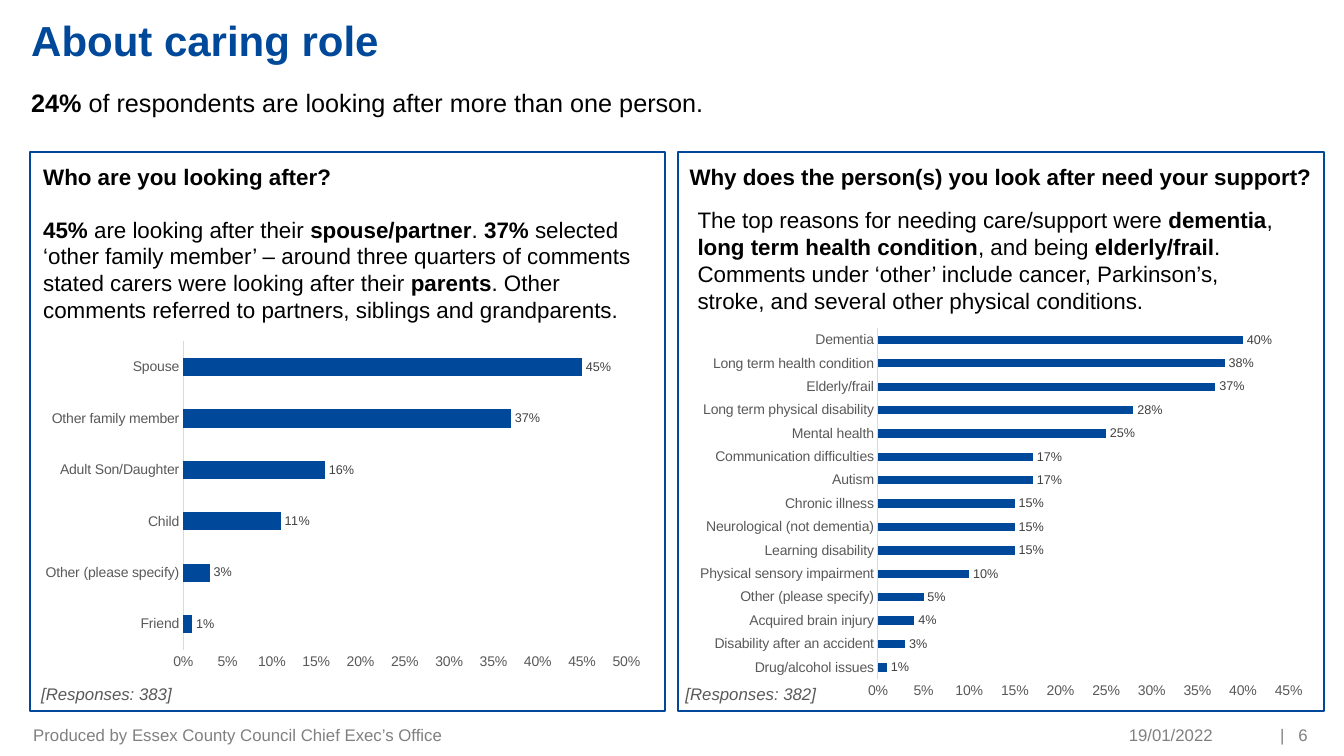
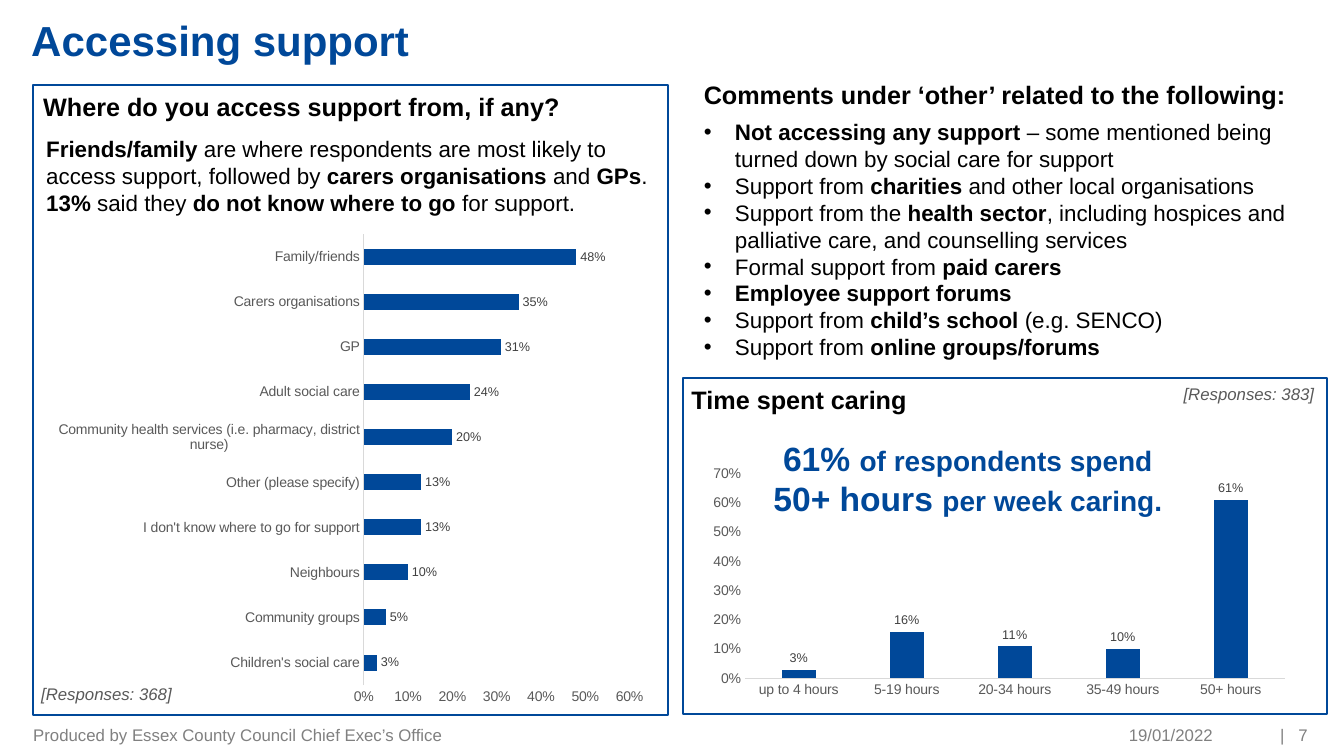
from dataclasses import dataclass

from lxml import etree
from pptx import Presentation
from pptx.chart.data import CategoryChartData
from pptx.dml.color import RGBColor
from pptx.enum.chart import XL_CHART_TYPE, XL_LABEL_POSITION, XL_TICK_MARK
from pptx.enum.shapes import MSO_SHAPE
from pptx.enum.text import MSO_ANCHOR, MSO_AUTO_SIZE, PP_ALIGN
from pptx.oxml.ns import qn
from pptx.util import Inches, Pt

BAR, COLUMN = XL_CHART_TYPE.BAR_CLUSTERED, XL_CHART_TYPE.COLUMN_CLUSTERED
LABEL_OUTSIDE = XL_LABEL_POSITION.OUTSIDE_END
NO_TICK = XL_TICK_MARK.NONE
RECT = MSO_SHAPE.RECTANGLE
MIDDLE, BOTTOM, TOP = MSO_ANCHOR.MIDDLE, MSO_ANCHOR.BOTTOM, MSO_ANCHOR.TOP
FIXED, GROW = MSO_AUTO_SIZE.NONE, MSO_AUTO_SIZE.SHAPE_TO_FIT_TEXT
LEFT, CENTER, RIGHT = PP_ALIGN.LEFT, PP_ALIGN.CENTER, PP_ALIGN.RIGHT
TITLE_CONTENT, TITLE_ONLY = 1, 5


@dataclass(frozen=True)
class Theme:
    font: str = "Arial"
    blue: RGBColor = RGBColor(0x00, 0x48, 0x99)
    black: RGBColor = RGBColor(0x00, 0x00, 0x00)
    footer: RGBColor = RGBColor(0x80, 0x80, 0x80)
    muted: RGBColor = RGBColor(0x59, 0x59, 0x59)
    label: RGBColor = RGBColor(0x40, 0x40, 0x40)
    axis: RGBColor = RGBColor(0xD9, 0xD9, 0xD9)
    title_size: int = 30
    callout_strong: int = 24
    callout_size: int = 20
    heading_size: int = 18
    body_size: int = 16
    small_size: int = 12
    axis_size: int = 10
    label_size: int = 9


class Deck:
    """Build slides that share one theme, title style and footer."""

    def __init__(self, theme):
        self.theme = theme
        self.prs = Presentation()
        self.prs.slide_width, self.prs.slide_height = Inches(13.33), Inches(7.5)
        self.s = None

    def slide(self, title, number, layout=TITLE_ONLY):
        t = self.theme
        self.s = self.prs.slides.add_slide(self.prs.slide_layouts[layout])
        sp = self.s.shapes.title
        self.place(sp, (0.21, 0.09, 5.18, 0.55))
        tf = self.frame(sp, BOTTOM, FIXED, (0.1, 0.05, 0.1, 0))
        self.paragraph(tf.paragraphs[0], title, t.title_size, t.blue, bold=True)
        self.footer("Produced by Essex County Council Chief Exec’s Office", 0.33, 6.3, LEFT)
        self.footer("19/01/2022", 9.63, 2.4, RIGHT)
        self.footer(f"|   {number}", 12.12, 0.85, RIGHT)

    def place(self, sp, box):
        sp.left, sp.top, sp.width, sp.height = map(Inches, box)

    def style(self, font, size, color, bold=None):
        font.name, font.size, font.bold = self.theme.font, Pt(size), bold
        font.color.rgb = color

    def frame(self, sp, anchor=TOP, fit=GROW, insets=(0.1, 0.05, 0.1, 0.05)):
        tf = sp.text_frame
        tf.word_wrap, tf.auto_size, tf.vertical_anchor = True, fit, anchor
        tf.margin_left, tf.margin_top, tf.margin_right, tf.margin_bottom = map(Inches, insets)
        return tf

    def paragraph(self, p, text, size, color, bold=False, align=LEFT, before=0, strong=None):
        self.style(p.font, size, color, bold)
        p.alignment, p.space_before = align, Pt(before)
        for i, part in enumerate(text.split("**")):
            if part:
                r = p.add_run()
                r.text = part
                if i % 2:
                    r.font.bold = True
                    if strong:
                        r.font.size = Pt(strong)

    def text(self, box, *lines, size=None, color=None, **options):
        t = self.theme
        tf = self.frame(self.s.shapes.add_textbox(*map(Inches, box)))
        for i, line in enumerate(lines):
            p = tf.add_paragraph() if i else tf.paragraphs[0]
            self.paragraph(p, line, size or t.body_size, color or t.black, **options)
        return tf

    def heading(self, box, text, size=None):
        self.text(box, text, size=size or self.theme.heading_size, bold=True)

    def callout(self, box, text):
        t = self.theme
        self.text(box, text, size=t.callout_size, color=t.blue, bold=True,
                  align=CENTER, strong=t.callout_strong)

    def responses(self, left, top, count):
        t = self.theme
        tf = self.text((left, top, 1.52, 0.3), f"[Responses: {count}]",
                       size=t.small_size, color=t.muted, before=4)
        tf.paragraphs[0].font.italic = True

    def footer(self, text, left, width, align):
        t = self.theme
        sp = self.s.shapes.add_textbox(*map(Inches, (left, 7.21, width, 0.15)))
        insets = (0, 0.05, 0.1, 0.05) if align == LEFT else (0.1, 0.05, 0, 0.05)
        tf = self.frame(sp, MIDDLE, FIXED, insets)
        self.paragraph(tf.paragraphs[0], text, t.small_size, t.footer, align=align)

    def panel(self, *box):
        sp = self.s.shapes.add_shape(RECT, *map(Inches, box))
        sp.shadow.inherit = False
        sp.fill.background()
        sp.line.color.rgb, sp.line.width = self.theme.blue, Pt(1.5)

    def bullets(self, box, heading, items):
        t = self.theme
        sp = self.s.placeholders[1]
        self.place(sp, box)
        tf = self.frame(sp, fit=FIXED)
        p = tf.paragraphs[0]
        self.paragraph(p, heading, t.heading_size, t.black, bold=True, before=6)
        self.indent(p, 0, None)
        for i, item in enumerate(items):
            p = tf.add_paragraph()
            self.paragraph(p, item, t.body_size, t.black, before=0 if i else 6)
            self.indent(p, 0.31, "•")

    def indent(self, p, width, bullet):
        pPr = p._p.get_or_add_pPr()
        pPr.set("marL", str(Inches(width)))
        pPr.set("indent", str(-Inches(width)))
        mark = etree.Element(qn("a:buChar" if bullet else "a:buNone"))
        if bullet:
            mark.set("char", bullet)
        pPr.find(qn("a:defRPr")).addprevious(mark)

    def chart(self, box, data, top, step, kind=BAR, gap=182, overlap=0, layout=None):
        t = self.theme
        cd = CategoryChartData(number_format="0%")
        cd.categories = list(data)
        cd.add_series("Series 1", [percent / 100 for percent in data.values()])
        chart = self.s.shapes.add_chart(kind, *map(Inches, box), cd).chart
        chart.has_legend = chart.has_title = False
        self.style(chart.font, t.axis_size, t.black)

        for axis in (chart.category_axis, chart.value_axis):
            axis.major_tick_mark = axis.minor_tick_mark = NO_TICK
            axis.has_major_gridlines = False
            self.style(axis.tick_labels.font, t.axis_size, t.muted)
        line = chart.category_axis.format.line
        line.color.rgb, line.width = t.axis, Pt(0.75)
        values = chart.value_axis
        values.format.line.fill.background()
        values.minimum_scale, values.maximum_scale, values.major_unit = 0, top, step
        values.tick_labels.number_format = "0%"
        values.tick_labels.number_format_is_linked = False

        plot = chart.plots[0]
        plot.gap_width, plot.overlap, plot.vary_by_categories = gap, overlap, False
        fill = plot.series[0].format.fill
        fill.solid()
        fill.fore_color.rgb = t.blue
        plot.has_data_labels = True
        labels = plot.data_labels
        labels.show_value, labels.position = True, LABEL_OUTSIDE
        labels.number_format, labels.number_format_is_linked = "0%", False
        self.style(labels.font, t.label_size, t.label)
        if layout:
            self.plot_layout(chart, layout)

    def plot_layout(self, chart, layout):
        area = chart.element.find(".//" + qn("c:plotArea"))
        for old in area.findall(qn("c:layout")):
            area.remove(old)
        node = etree.Element(qn("c:layout"))
        manual = etree.SubElement(node, qn("c:manualLayout"))
        settings = [("layoutTarget", "inner"), ("xMode", "edge"), ("yMode", "edge")]
        for tag, value in settings + list(zip("xywh", layout)):
            etree.SubElement(manual, qn(f"c:{tag}")).set("val", str(value))
        area.insert(0, node)


def caring_role(deck):
    size = deck.theme.body_size
    deck.slide("About caring role", 6)
    deck.text((0.21, 0.82, 7.28, 0.4),
              "**24% **of respondents are looking after more than one person.",
              size=deck.theme.heading_size)

    deck.panel(0.3, 1.51, 6.3, 5.54)
    deck.heading((0.33, 1.57, 6.15, 0.37), "Who are you looking after?", size)
    deck.text((0.33, 2.09, 6.14, 1.18),
              "**45% **are looking after their **spouse/partner**. **37% **selected "
              "‘other family member’ – around three quarters of comments stated carers "
              "were looking after their **parents**. Other comments referred to "
              "partners, siblings and grandparents.")
    deck.chart((0.33, 3.32, 6.14, 3.39), {
        "Friend": 1, "Other (please specify)": 3, "Child": 11,
        "Adult Son/Daughter": 16, "Other family member": 37, "Spouse": 45,
    }, top=0.5, step=0.05)
    deck.responses(0.31, 6.73, 383)

    deck.panel(6.72, 1.51, 6.41, 5.54)
    deck.heading((6.74, 1.57, 6.39, 0.37),
                 "Why does the person(s) you look after need your support?", size)
    deck.text((6.82, 2, 5.97, 1.18),
              "The top reasons for needing care/support were **dementia**, "
              "**long term health condition**, and being **elderly/frail**.",
              "Comments under ‘other’ include cancer, Parkinson’s, stroke, and "
              "several other physical conditions.")
    deck.chart((6.82, 3.18, 6.22, 3.83), {
        "Drug/alcohol issues": 1, "Disability after an accident": 3,
        "Acquired brain injury": 4, "Other (please specify)": 5,
        "Physical sensory impairment": 10, "Learning disability": 15,
        "Neurological (not dementia)": 15, "Chronic illness": 15, "Autism": 17,
        "Communication difficulties": 17, "Mental health": 25,
        "Long term physical disability": 28, "Elderly/frail": 37,
        "Long term health condition": 38, "Dementia": 40,
    }, top=0.45, step=0.05)
    deck.responses(6.7, 6.73, 382)


def accessing_support(deck):
    deck.slide("Accessing support", 7, TITLE_CONTENT)
    deck.panel(0.33, 0.84, 6.3, 6.25)
    deck.heading((0.33, 0.86, 5.37, 0.4), "Where do you access support from, if any?")
    deck.text((0.36, 1.29, 6.28, 0.91),
              "**Friends/family **are where respondents are most likely to access "
              "support, followed by **carers organisations **and **GPs**. **13% **said "
              "they **do not know where to go **for support.")
    deck.chart((0.46, 2.23, 6.04, 4.86), {
        "Children's social care": 3, "Community groups": 5, "Neighbours": 10,
        "I don't know where to go for support": 13, "Other (please specify)": 13,
        "Community health services (i.e. pharmacy, district nurse)": 20,
        "Adult social care": 24, "GP": 31, "Carers organisations": 35,
        "Family/friends": 48,
    }, top=0.6, step=0.1)
    deck.responses(0.31, 6.73, 368)

    deck.bullets((6.88, 0.74, 6.28, 2.91), "Comments under ‘other’ related to the following:", [
        "**Not accessing any support **– some mentioned being turned down by "
        "social care for support",
        "Support from **charities** and other local organisations",
        "Support from the **health sector**, including hospices and palliative "
        "care, and counselling services",
        "Formal support from **paid carers**",
        "**Employee support forums**",
        "Support from **child’s school **(e.g. SENCO)",
        "Support from **online groups/forums**",
    ])

    deck.panel(6.77, 3.75, 6.39, 3.33)
    deck.heading((6.76, 3.76, 2.37, 0.4), "Time spent caring")
    deck.responses(11.64, 3.76, 383)
    deck.chart((6.98, 4.52, 6.78, 2.57), {
        "up to 4 hours": 3, "5-19 hours": 16, "20-34 hours": 11,
        "35-49 hours": 10, "50+ hours": 61,
    }, top=0.7, step=0.1, kind=COLUMN, gap=219, overlap=-27, layout=(0.06, 0.07, 0.79, 0.79))
    deck.callout((7.57, 4.29, 4.06, 0.91),
                 "**61% **of respondents spend **50+ hours **per week caring.")


def main():
    deck = Deck(Theme())
    caring_role(deck)
    accessing_support(deck)
    deck.prs.save("out.pptx")


if __name__ == "__main__":
    main()
